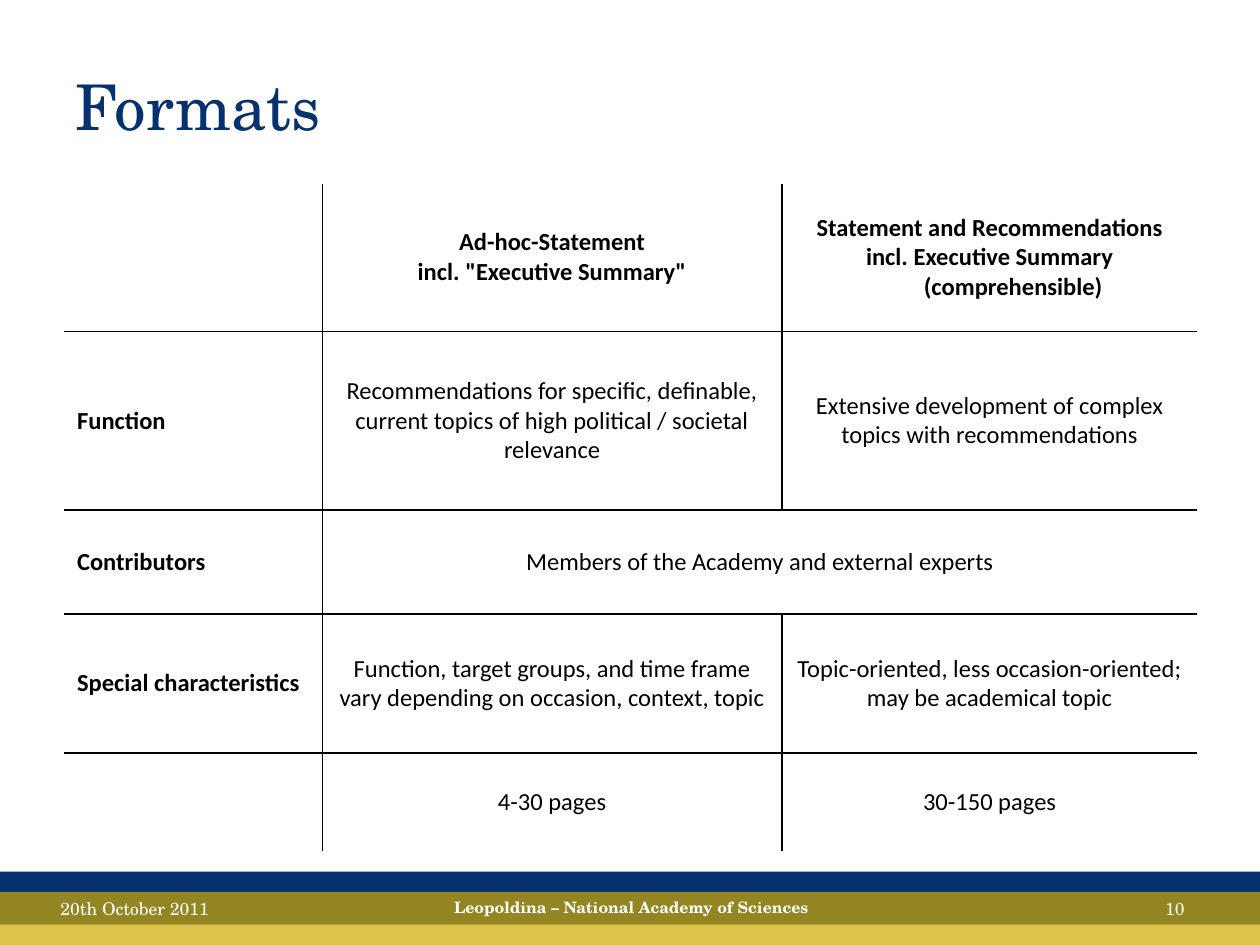
import pptx
import pptx.dml.color
import pptx.enum.shapes
import pptx.enum.text
import pptx.oxml.ns
import pptx.util
from lxml import etree

Cm = pptx.util.Cm
Pt = pptx.util.Pt
RGBColor = pptx.dml.color.RGBColor
Align = pptx.enum.text.PP_ALIGN
Anchor = pptx.enum.text.MSO_ANCHOR
qn = pptx.oxml.ns.qn

NAVY = RGBColor(0x05, 0x32, 0x6F)
GOLD = RGBColor(0xD0, 0xAB, 0x02)
WHITE = RGBColor(0xFF, 0xFF, 0xFF)
BLACK = RGBColor(0x00, 0x00, 0x00)
SERIF = "TeX Gyre Schola"
SANS = "Calibri"
WIDTH, HEIGHT = 25.4, 19.05
HANGING = Cm(0.95)


class SlideBuilder:
    """Draws styled elements on one page; lengths are centimetres."""

    def __init__(self, page):
        self.page = page

    def style(self, para, size, font, color, bold=False, align=Align.LEFT):
        para.alignment = align
        para.font.size = Pt(size)
        for span in para.runs:
            span.font.size = Pt(size)
            span.font.name = font
            span.font.bold = bold
            span.font.color.rgb = color

    def bar(self, top, height, color, opacity=100):
        shape = self.page.shapes.add_shape(
            pptx.enum.shapes.MSO_SHAPE.RECTANGLE, 0, Cm(top), Cm(WIDTH), Cm(height))
        shape.shadow.inherit = False
        shape.line.fill.background()
        shape.fill.solid()
        shape.fill.fore_color.rgb = color
        if opacity < 100:
            tone = shape.fill._xPr.find(".//" + qn("a:srgbClr"))
            etree.SubElement(tone, qn("a:alpha"), val=str(opacity * 1000))

    def text(self, words, left, top, width, height, size, color,
             bold=False, align=Align.LEFT, anchor=Anchor.TOP):
        box = self.page.shapes.add_textbox(Cm(left), Cm(top), Cm(width), Cm(height))
        frame = box.text_frame
        frame.word_wrap = True
        frame.vertical_anchor = anchor
        frame.text = words
        self.style(frame.paragraphs[0], size, SERIF, color, bold, align)

    def table(self, left, top, widths, heights):
        frame = self.page.shapes.add_table(
            len(heights), len(widths), Cm(left), Cm(top), Cm(sum(widths)), Cm(sum(heights)))
        table = frame.table
        table.first_row = table.horz_banding = False
        for column, width in zip(table.columns, widths):
            column.width = Cm(width)
        for row, height in zip(table.rows, heights):
            row.height = Cm(height)
        return table

    def cell(self, cell, words, bold, align, hanging):
        cell.vertical_anchor = Anchor.MIDDLE
        cell.text_frame.text = words
        for para in cell.text_frame.paragraphs:
            if hanging:
                properties = para._p.get_or_add_pPr()
                properties.set("marL", str(HANGING))
                properties.set("indent", str(-HANGING))
            self.style(para, 14, SANS, BLACK, bold, align)

    def borders(self, cell, left, right, top, bottom):
        properties = cell._tc.get_or_add_tcPr()
        sides = {"L": left, "R": right, "T": top, "B": bottom}
        for side, visible in sides.items():
            line = etree.SubElement(properties, qn("a:ln" + side), w=str(Pt(1)))
            if visible:
                fill = etree.SubElement(line, qn("a:solidFill"))
                etree.SubElement(fill, qn("a:srgbClr"), val=str(BLACK))
            else:
                etree.SubElement(line, qn("a:noFill"))
        cell.fill.background()


def main():
    deck = pptx.Presentation()
    deck.slide_width, deck.slide_height = Cm(WIDTH), Cm(HEIGHT)
    builder = SlideBuilder(deck.slides.add_slide(deck.slide_layouts[6]))

    # Footer bars: the translucent gold overlaps the navy
    builder.bar(17.57, 1.07, NAVY)
    builder.bar(17.98, 1.07, GOLD, opacity=70)

    # Title
    builder.text("Formats", 1.27, 0.53, 22.86, 3.18, 36, NAVY, anchor=Anchor.MIDDLE)

    # Comparison of formats
    rows = [
        ("", "Ad-hoc-Statement\nincl. \"Executive Summary\"",
         "Statement and Recommendations\nincl. Executive Summary (comprehensible)"),
        ("Function",
         "Recommendations for specific, definable, current topics of high political"
         " / societal relevance",
         "Extensive development of complex topics with recommendations"),
        ("Contributors", "Members of the Academy and external experts", ""),
        ("Special characteristics",
         "Function, target groups, and time frame vary depending on occasion, context, topic",
         "Topic-oriented, less occasion-oriented; may be academical topic"),
        ("", "4-30 pages", "30-150 pages"),
    ]
    shared_row = 2
    hanging_cells = {(0, 2), (4, 1), (4, 2)}
    table = builder.table(1.3, 3.7, [5.2, 9.26, 8.38], [2.98, 3.6, 2.1, 2.8, 1.98])
    last_row, last_column = len(rows) - 1, 2
    for r, row in enumerate(rows):
        for c, words in enumerate(row):
            cell = table.cell(r, c)
            shared = r == shared_row
            if words:
                builder.cell(cell, words, bold=r == 0 or c == 0,
                             align=Align.CENTER if c else Align.LEFT,
                             hanging=c == 0 or (r, c) in hanging_cells)
            builder.borders(cell,
                            left=c > 0 and not (shared and c == 2),
                            right=c < last_column and not (shared and c == 1),
                            top=r > 0, bottom=r < last_row)
    table.cell(shared_row, 1).merge(table.cell(shared_row, 2))

    # Footer texts
    footer_top, footer_height = 17.98, 0.64
    builder.text("20th October 2011", 0.97, footer_top, 5.92, footer_height, 10, WHITE)
    builder.text("Leopoldina – National Academy of Sciences", 6.88, footer_top, 11.68,
                 footer_height, 9, WHITE, bold=True, align=Align.CENTER)
    builder.text("10", 18.21, footer_top, 5.92, footer_height, 10, WHITE, align=Align.RIGHT)

    deck.save("out.pptx")


if __name__ == "__main__":
    main()
